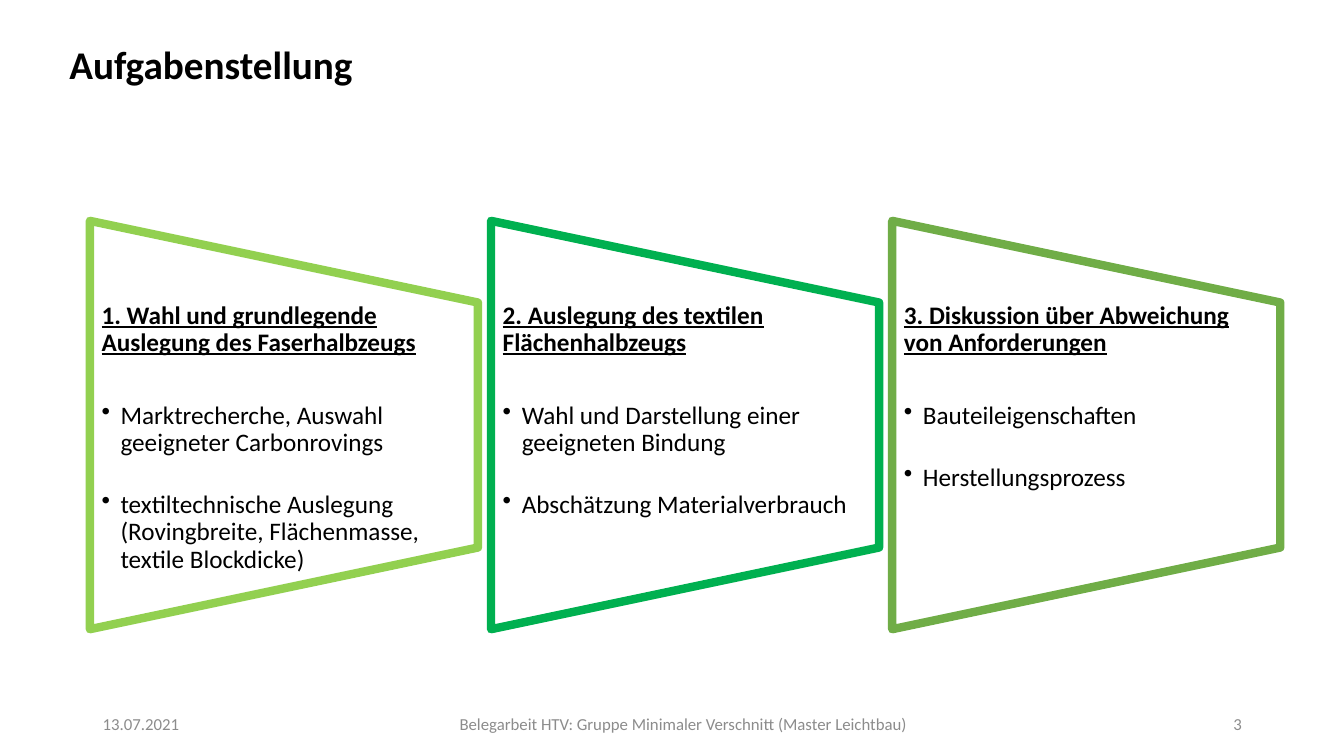
import dataclasses

import lxml.etree
import pptx
import pptx.dml.color
import pptx.enum.shapes
import pptx.enum.text
import pptx.oxml.ns
import pptx.util

Cm = pptx.util.Cm
Pt = pptx.util.Pt
Align = pptx.enum.text.PP_ALIGN
Anchor = pptx.enum.text.MSO_ANCHOR


@dataclasses.dataclass(frozen=True)
class Theme:
    font: str = "Calibri"
    text: str = "000000"
    muted: str = "8C8C8C"
    panels: tuple = ("92D050", "00B050", "70AD47")
    title_size: int = 28
    body_size: int = 18
    footer_size: int = 12


theme = Theme()


def add_box(left, top, width, height, anchor, side_inset=0.25, end_inset=0.13):
    """Add an empty wrapping text box, measured in centimetres."""
    frame = page.shapes.add_textbox(Cm(left), Cm(top), Cm(width), Cm(height)).text_frame
    frame.word_wrap = True
    frame.vertical_anchor = anchor
    frame.margin_left = frame.margin_right = Cm(side_inset)
    frame.margin_top = frame.margin_bottom = Cm(end_inset)
    return frame


def write(para, text, size, color=theme.text, bold=False, align=Align.LEFT):
    para.text = text
    para.alignment = align
    para.font.name = theme.font
    para.font.size = Pt(size)
    para.font.bold = bold
    para.font.color.rgb = pptx.dml.color.RGBColor.from_string(color)


deck = pptx.Presentation()
deck.slide_width, deck.slide_height = Cm(33.87), Cm(19.05)
page = deck.slides.add_slide(deck.slide_layouts[6])

title = add_box(1.5, 0.43, 32, 2.49, Anchor.MIDDLE).paragraphs[0]
write(title, "Aufgabenstellung", theme.title_size, bold=True)
title.line_spacing = 0.9

tasks = [
    ("1. Wahl und grundlegende Auslegung des Faserhalbzeugs",
     ["Marktrecherche, Auswahl geeigneter Carbonrovings",
      "textiltechnische Auslegung (Rovingbreite, Flächenmasse, textile Blockdicke)"]),
    ("2. Auslegung des textilen Flächenhalbzeugs",
     ["Wahl und Darstellung einer geeigneten Bindung",
      "Abschätzung Materialverbrauch"]),
    ("3. Diskussion über Abweichung von Anforderungen",
     ["Bauteileigenschaften", "Herstellungsprozess"]),
]
panel_pitch = 10.11

for index, (heading, points) in enumerate(tasks):
    offset = index * panel_pitch
    panel = page.shapes.add_shape(
        pptx.enum.shapes.MSO_SHAPE.FLOWCHART_MANUAL_OPERATION,
        Cm(2.01 + offset), Cm(5.82), Cm(10.29), Cm(9.78))
    panel.rotation = 270
    panel.shadow.inherit = False
    panel.fill.background()
    panel.line.color.rgb = pptx.dml.color.RGBColor.from_string(theme.panels[index])
    panel.line.width = Pt(6)

    frame = add_box(2.26 + offset, 7.62, 9.78, 6.17, Anchor.TOP, 0.3, 0)
    para = frame.paragraphs[0]
    write(para, heading, theme.body_size, bold=True)
    para.font.underline = True
    para.line_spacing = 0.9
    para.space_after = Pt(32.5)
    for point in points:
        para = frame.add_paragraph()
        write(para, point, theme.body_size)
        para.line_spacing = 0.9
        para.space_after = Pt(25)
        properties = para._p.get_or_add_pPr()
        properties.set("marL", str(Cm(0.48)))
        properties.set("indent", str(-Cm(0.48)))
        bullet = lxml.etree.Element(pptx.oxml.ns.qn("a:buChar"), char="•")
        properties.find(pptx.oxml.ns.qn("a:defRPr")).addprevious(bullet)

footers = [
    (2.34, 7.62, "13.07.2021", Align.LEFT),
    (11.23, 11.99, "Belegarbeit HTV: Gruppe Minimaler Verschnitt (Master Leichtbau)", Align.CENTER),
    (23.93, 7.62, "3", Align.RIGHT),
]
for left, width, text, align in footers:
    para = add_box(left, 17.73, width, 1.02, Anchor.MIDDLE).paragraphs[0]
    write(para, text, theme.footer_size, theme.muted, align=align)

deck.save("out.pptx")
